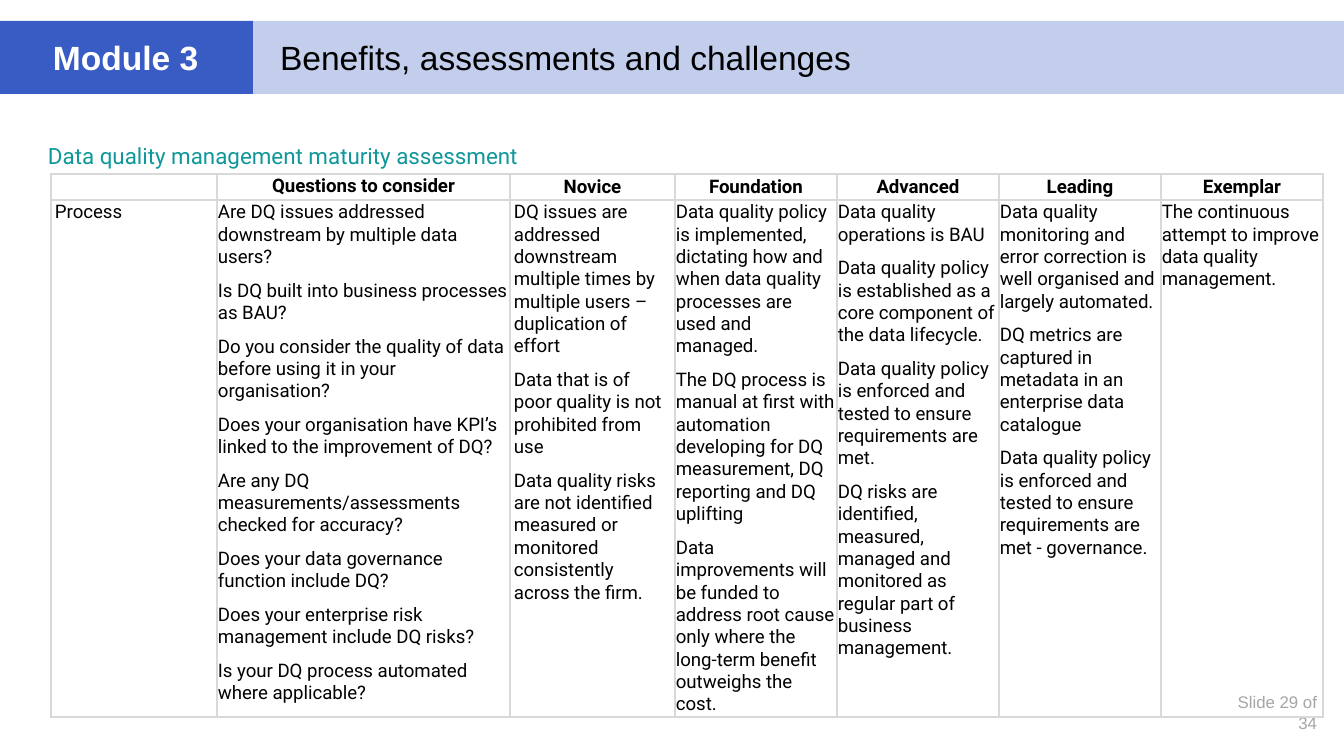
from lxml.etree import SubElement
from pptx import Presentation
from pptx.dml.color import RGBColor
from pptx.enum.shapes import MSO_SHAPE
from pptx.enum.text import MSO_ANCHOR, PP_ALIGN
from pptx.oxml import parse_xml
from pptx.oxml.ns import nsdecls, qn
from pptx.util import Pt

PX = 6809  # EMU per px
BORDER = "D9D9D9"
COL_WIDTHS = [166, 293, 165] + [162] * 4
ROW_HEIGHTS = [26, 517]
NARROW, WIDE = (1, 1, 1, 1), (4, 1, 4, 1)

HEADERS = ["", "Questions to consider", "Novice", "Foundation", "Advanced",
           "Leading", "Exemplar"]
PROCESS = [
    ["Process"],
    ["Are DQ issues addressed downstream by multiple data users?",
     "Is DQ built into business processes as BAU?",
     "Do you consider the quality of data before using it in your organisation?",
     "Does your organisation have KPI’s linked to the improvement of DQ?",
     "Are any DQ measurements/assessments checked for accuracy?",
     "Does your data governance function include DQ?",
     "Does your enterprise risk management include DQ risks?",
     "Is your DQ process automated where applicable?"],
    ["DQ issues are addressed downstream multiple times by multiple users – "
     "duplication of effort",
     "Data that is of poor quality is not prohibited from use",
     "Data quality risks are not identified measured or monitored consistently "
     "across the firm."],
    ["Data quality policy is implemented, dictating how and when data quality "
     "processes are used and managed.",
     "The DQ process is manual at first with automation developing for DQ "
     "measurement, DQ reporting and DQ uplifting",
     "Data improvements will be funded to address root cause only where the "
     "long-term benefit outweighs the cost."],
    ["Data quality operations is BAU",
     "Data quality policy is established as a core component of the data lifecycle.",
     "Data quality policy is enforced and tested to ensure requirements are met.",
     "DQ risks are identified, measured, managed and monitored as regular part "
     "of business management."],
    ["Data quality monitoring and error correction is well organised and "
     "largely automated.",
     "DQ metrics are captured in metadata in an enterprise data catalogue",
     "Data quality policy is enforced and tested to ensure requirements are met "
     "- governance."],
    ["The continuous attempt to improve data quality management."],
]


def px(n):
    return round(n * PX)


def rgb(value):
    return RGBColor.from_string(value)


def set_attrs(obj, values):
    for name, value in values.items():
        setattr(obj, name, value)


def set_margins(obj, margins):
    sides = ("left", "top", "right", "bottom")
    set_attrs(obj, {f"margin_{s}": px(m) for s, m in zip(sides, margins)})


def write(tf, texts, size, font, color, bold=False, **para):
    for i, text in enumerate(texts):
        p = tf.paragraphs[0] if i == 0 else tf.add_paragraph()
        set_attrs(p, para)
        if text:
            r = p.add_run()
            r.text = text
            set_attrs(r.font, {"size": Pt(size), "name": font, "bold": bold})
            r.font.color.rgb = rgb(color)
        else:
            SubElement(p._p, qn("a:endParaRPr"), sz=str(size * 100))


def add_text(s, box, margins, text, size, font, color, wrap=True, **para):
    tf = s.shapes.add_textbox(*map(px, box)).text_frame
    tf.word_wrap = wrap
    set_margins(tf, margins)
    write(tf, [text], size, font, color, **para)


def add_banner(s, box, fill, margins, text, color, bold=False):
    sp = s.shapes.add_shape(MSO_SHAPE.RECTANGLE, *map(px, box))
    sp.shadow.inherit = False
    sp.fill.solid()
    sp.fill.fore_color.rgb = rgb(fill)
    sp.line.fill.background()
    tf = sp.text_frame
    set_attrs(tf, {"word_wrap": True, "vertical_anchor": MSO_ANCHOR.MIDDLE})
    set_margins(tf, margins)
    write(tf, [text], 18, "Arial", color, bold, alignment=PP_ALIGN.LEFT)


def add_borders(cell):
    tc_pr = cell._tc.get_or_add_tcPr()
    for i, side in enumerate("LRTB"):
        tc_pr.insert(i, parse_xml(
            f'<a:ln{side} {nsdecls("a")} w="12700"><a:solidFill>'
            f'<a:srgbClr val="{BORDER}"/></a:solidFill></a:ln{side}>'))


def add_maturity_table(s, left, top):
    size = sum(COL_WIDTHS), sum(ROW_HEIGHTS)
    table = s.shapes.add_table(len(ROW_HEIGHTS), len(COL_WIDTHS),
                               *map(px, (left, top, *size))).table
    set_attrs(table, {"first_row": False, "horz_banding": False})
    for col, width in zip(table.columns, COL_WIDTHS):
        col.width = px(width)
    for row, height in zip(table.rows, ROW_HEIGHTS):
        row.height = px(height)
    for i, row in enumerate([[[h] for h in HEADERS], PROCESS]):
        header = i == 0
        for j, texts in enumerate(row):
            cell = table.cell(i, j)
            cell.fill.background()
            add_borders(cell)
            set_margins(cell, WIDE if j in (0, 2) else NARROW)
            cell.vertical_anchor = (MSO_ANCHOR.MIDDLE if header and j > 1
                                    else MSO_ANCHOR.TOP)
            write(cell.text_frame, texts, 10, "Roboto", "000000", header,
                  alignment=PP_ALIGN.CENTER if header else PP_ALIGN.LEFT,
                  line_spacing=Pt(12), space_before=Pt(3), space_after=Pt(3))


def main():
    prs = Presentation()
    set_attrs(prs, {"slide_width": px(1344), "slide_height": px(756)})
    s = prs.slides.add_slide(prs.slide_layouts[6])

    # Slide number
    add_text(s, (1136, 682, 208, 74), (79, 27, 27, 27), "Slide 29 of 34",
             9, "Arial", "A6A6A6", wrap=False,
             alignment=PP_ALIGN.RIGHT, space_after=Pt(6))

    # Title band
    add_banner(s, (253, 21, 1091, 73), "C3CEED", (27, 16, 27, 16),
               "Benefits, assessments and challenges", "000000")
    add_banner(s, (0, 21, 253, 73), "385CC4", (53, 16, 53, 16),
               "Module 3", "FFFFFF", bold=True)

    # Heading and assessment table
    add_text(s, (43, 124, 661, 568), (5, 5, 5, 5),
             "Data quality management maturity assessment",
             12, "Roboto", "0F979B",
             line_spacing=1.5, space_before=Pt(3), space_after=Pt(3))
    add_maturity_table(s, 51, 174)

    prs.save("out.pptx")


if __name__ == "__main__":
    main()
